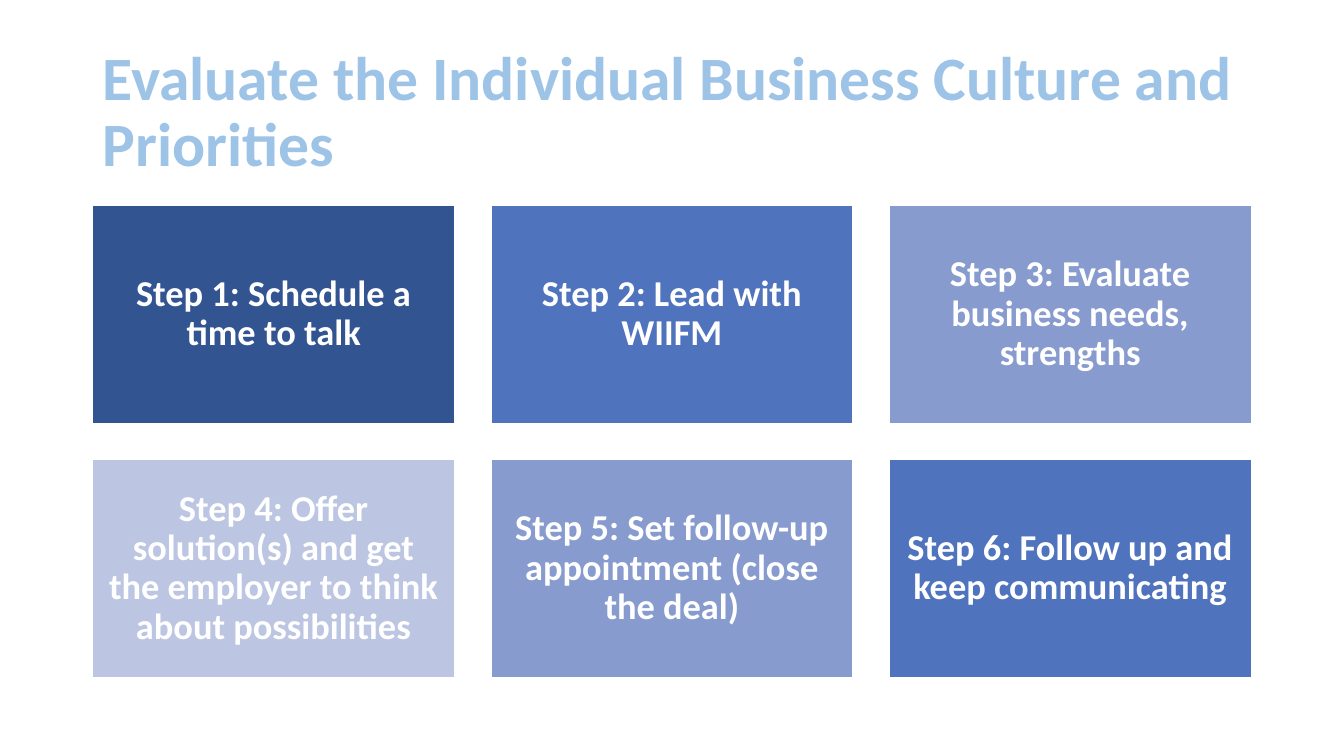
from dataclasses import dataclass

from pptx import Presentation
from pptx.dml.color import RGBColor
from pptx.enum.shapes import MSO_SHAPE as Shape
from pptx.enum.text import MSO_ANCHOR as Anchor, PP_ALIGN as Align
from pptx.util import Inches, Pt


@dataclass(frozen=True)
class Theme:
    font: str = "Calibri"
    heading: str = "9DC3E6"
    white: str = "FFFFFF"
    navy: str = "325491"
    blue: str = "4F73BD"
    periwinkle: str = "879BCE"
    lavender: str = "BCC6E2"
    heading_size: int = 44
    step_size: int = 26
    outline: int = 1


THEME = Theme()
HEADING = "Evaluate the Individual Business Culture and Priorities"
STEPS = [
    ("Step 1: Schedule a time to talk", THEME.navy),
    ("Step 2: Lead with WIIFM", THEME.blue),
    ("Step 3: Evaluate business needs, strengths", THEME.periwinkle),
    ("Step 4: Offer solution(s) and get the employer to think about possibilities", THEME.lavender),
    ("Step 5: Set follow-up appointment (close the deal)", THEME.periwinkle),
    ("Step 6: Follow up and keep communicating", THEME.blue),
]


def apply_format(target, values):
    for attribute, value in values.items():
        setattr(target, attribute, value)


def write_text(frame, wording, size, color, align, inset_x, inset_y):
    apply_format(frame, {
        "word_wrap": True,
        "vertical_anchor": Anchor.MIDDLE,
        "margin_left": Inches(inset_x),
        "margin_right": Inches(inset_x),
        "margin_top": Inches(inset_y),
        "margin_bottom": Inches(inset_y),
    })
    paragraph = frame.paragraphs[0]
    apply_format(paragraph, {"alignment": align, "line_spacing": 0.9})
    run = paragraph.add_run()
    run.text = wording
    apply_format(run.font, {"name": THEME.font, "size": Pt(size), "bold": True})
    run.font.color.rgb = RGBColor.from_string(color)


def add_heading(slide, left, top, width, height):
    heading = slide.shapes.add_textbox(*map(Inches, (left, top, width, height)))
    write_text(heading.text_frame, HEADING, THEME.heading_size, THEME.heading,
               Align.LEFT, 0.1, 0.05)


def add_step(slide, wording, color, left, top, width, height):
    step = slide.shapes.add_shape(Shape.RECTANGLE, *map(Inches, (left, top, width, height)))
    step.shadow.inherit = False
    step.fill.solid()
    step.fill.fore_color.rgb = RGBColor.from_string(color)
    step.line.color.rgb = RGBColor.from_string(THEME.white)
    step.line.width = Pt(THEME.outline)
    write_text(step.text_frame, wording, THEME.step_size, THEME.white,
               Align.CENTER, 0.11, 0.11)


def add_step_grid(slide, left, top, width, height, columns=3, gap=0.36):
    rows = len(STEPS) // columns
    step_width = (width - gap * (columns - 1)) / columns
    step_height = (height - gap * (rows - 1)) / rows
    for index, (wording, color) in enumerate(STEPS):
        row, column = divmod(index, columns)
        add_step(slide, wording, color,
                 left + column * (step_width + gap),
                 top + row * (step_height + gap),
                 step_width, step_height)


def main():
    deck = Presentation()
    apply_format(deck, {"slide_width": Inches(13.33), "slide_height": Inches(7.5)})
    slide = deck.slides.add_slide(deck.slide_layouts[6])
    add_heading(slide, 0.92, 0.4, 11.5, 1.45)
    add_step_grid(slide, 0.92, 2.04, 11.49, 4.68)
    deck.save("out.pptx")


if __name__ == "__main__":
    main()
